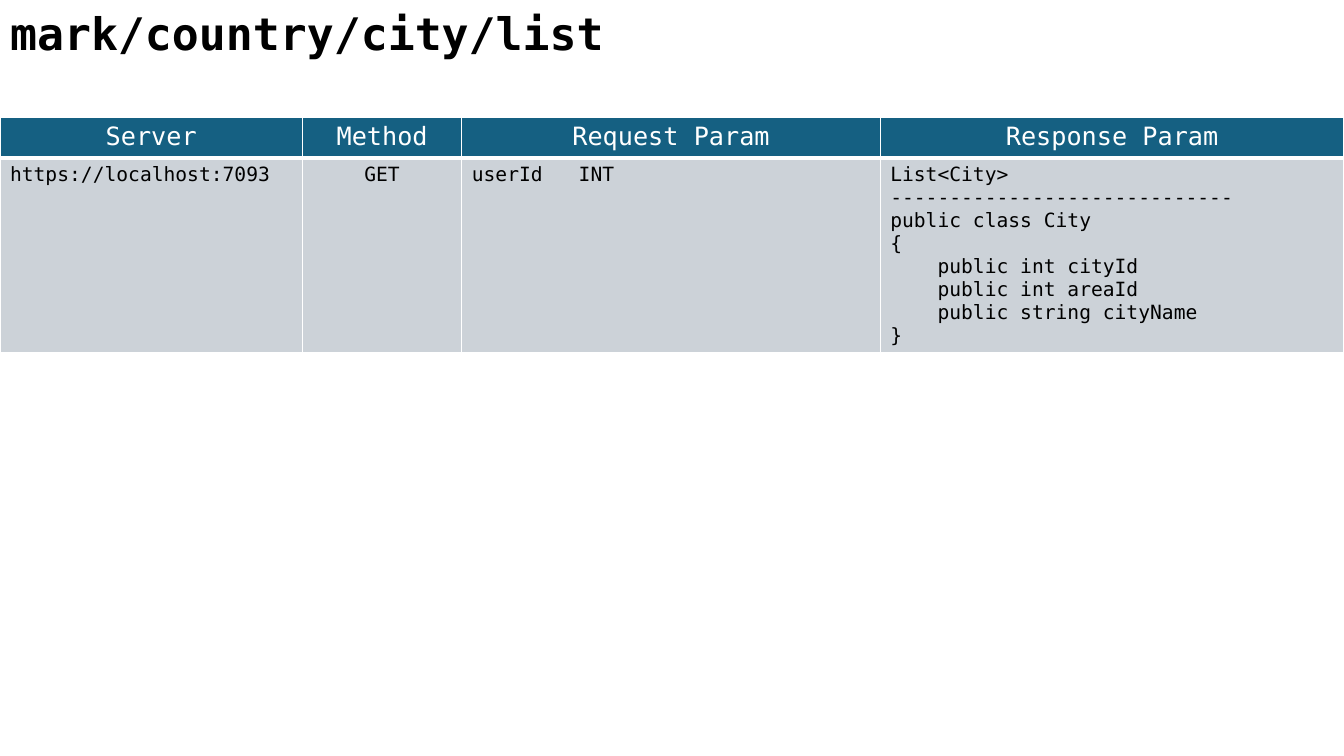
from lxml import etree
from pptx import Presentation
from pptx.dml.color import RGBColor
from pptx.enum.text import MSO_ANCHOR, PP_ALIGN
from pptx.oxml.ns import qn
from pptx.util import Inches, Pt

LEFT, CENTER = PP_ALIGN.LEFT, PP_ALIGN.CENTER
MIDDLE = MSO_ANCHOR.MIDDLE

TEAL = RGBColor(0x15, 0x60, 0x82)
GREY = RGBColor(0xCC, 0xD2, 0xD8)
WHITE = RGBColor(0xFF, 0xFF, 0xFF)
BLACK = RGBColor(0x00, 0x00, 0x00)
FONT = "DejaVu Sans Mono"

COLUMN_WIDTHS = [3, 1.58, 4.15, 4.6]
HEADER_HEIGHT, BODY_HEIGHT = 0.41, 1.92
TABLE_TOP = 1.16
TYPE_TAB = 1.06

HEADINGS = ["Server", "Method", "Request Param", "Response Param"]
CITY_CLASS = """List<City>
-----------------------------
public class City
{
    public int cityId
    public int areaId
    public string cityName
}"""
ENDPOINT = ["https://localhost:7093", "GET", "userId\tINT", CITY_CLASS]
ENDPOINT_ALIGNMENTS = [LEFT, CENTER, LEFT, LEFT]


def style_text(frame, size, color, alignment, bold=False):
    for para in frame.paragraphs:
        para.alignment = alignment
        for span in para.runs:
            span.font.name = FONT
            span.font.size = Pt(size)
            span.font.bold = bold
            span.font.color.rgb = color


def add_tab_stop(para, inches):
    tab_list = etree.SubElement(para._p.get_or_add_pPr(), qn("a:tabLst"))
    etree.SubElement(tab_list, qn("a:tab"), pos=str(Inches(inches)), algn="l")


def set_borders(cell, top, bottom):
    """Draw white cell borders; top and bottom are widths in points."""
    properties = cell._tc.get_or_add_tcPr()
    widths = {"a:lnL": 1, "a:lnR": 1, "a:lnT": top, "a:lnB": bottom}
    for index, (tag, width) in enumerate(widths.items()):
        line = etree.Element(qn(tag), w=str(Pt(width)))
        fill = etree.SubElement(line, qn("a:solidFill"))
        etree.SubElement(fill, qn("a:srgbClr"), val=str(WHITE))
        properties.insert(index, line)


def fill_cell(cell, text, fill, size, color, alignment, top=1, bottom=1):
    cell.text_frame.text = text
    cell.fill.solid()
    cell.fill.fore_color.rgb = fill
    if "\t" in text:
        add_tab_stop(cell.text_frame.paragraphs[0], TYPE_TAB)
    style_text(cell.text_frame, size, color, alignment)
    set_borders(cell, top, bottom)


def set_title(page, text):
    title = page.shapes.title
    title.left, title.top = 0, 0
    title.width, title.height = Inches(6.39), Inches(0.64)
    frame = title.text_frame
    frame.text = text
    frame.word_wrap = False
    frame.vertical_anchor = MIDDLE
    style_text(frame, 32, BLACK, LEFT, bold=True)


def add_endpoint_table(page, deck):
    table = page.shapes.add_table(
        2, len(HEADINGS), 0, Inches(TABLE_TOP),
        deck.slide_width, Inches(HEADER_HEIGHT + BODY_HEIGHT)).table
    for column, width in zip(table.columns, COLUMN_WIDTHS):
        column.width = Inches(width)
    for row, height in zip(table.rows, [HEADER_HEIGHT, BODY_HEIGHT]):
        row.height = Inches(height)
    for index, heading in enumerate(HEADINGS):
        fill_cell(table.cell(0, index), heading, TEAL, 18, WHITE, CENTER,
                  bottom=3)
        fill_cell(table.cell(1, index), ENDPOINT[index], GREY, 14, BLACK,
                  ENDPOINT_ALIGNMENTS[index], top=3)


def main():
    deck = Presentation()
    deck.slide_width, deck.slide_height = Inches(13.33), Inches(7.5)
    page = deck.slides.add_slide(deck.slide_layouts.get_by_name("Title Only"))
    add_endpoint_table(page, deck)
    set_title(page, "mark/country/city/list")
    deck.save("out.pptx")


if __name__ == "__main__":
    main()
